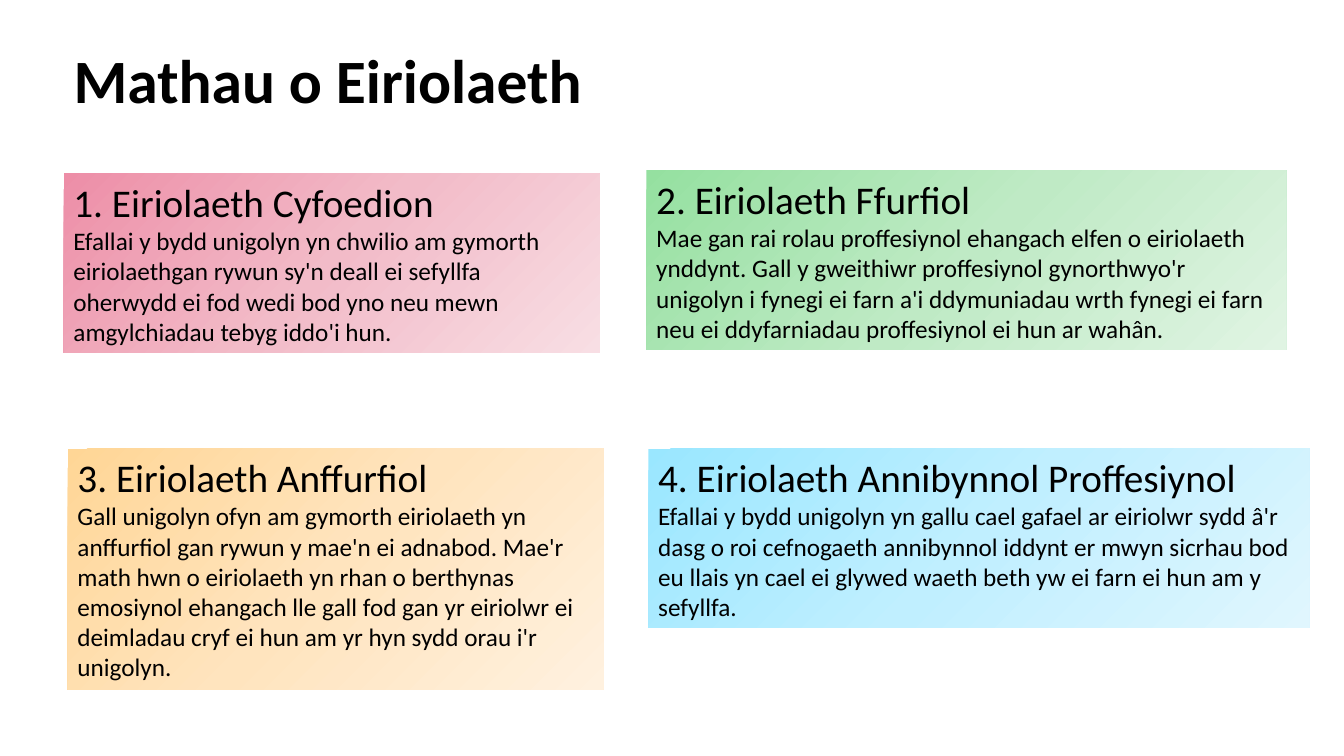
import copy
import dataclasses

import pptx
import pptx.dml.color
import pptx.enum.text
import pptx.oxml.ns
import pptx.util

RGB = pptx.dml.color.RGBColor
BLACK = RGB(0x00, 0x00, 0x00)
PINK = (RGB(0xED, 0x8E, 0xA7), RGB(0xF2, 0xBB, 0xC8), RGB(0xF8, 0xDE, 0xE4))
GREEN = (RGB(0x95, 0xE0, 0xA0), RGB(0xBF, 0xEA, 0xC5), RGB(0xE0, 0xF4, 0xE3))
AMBER = (RGB(0xFF, 0xD6, 0x96), RGB(0xFF, 0xE4, 0xBE), RGB(0xFF, 0xF1, 0xDF))
BLUE = (RGB(0x9A, 0xE7, 0xFF), RGB(0xC0, 0xEF, 0xFF), RGB(0xE0, 0xF6, 0xFE))
FONT = "Calibri"
SCALE = 9144


@dataclasses.dataclass(frozen=True)
class Card:
    left: int
    top: int
    width: int
    height: int
    tones: tuple[RGB, RGB, RGB]
    head: str
    body: str


CARDS = (
    Card(63, 172, 532, 178, PINK, "1. Eiriolaeth Cyfoedion",
         "Efallai y bydd unigolyn yn chwilio am gymorth eiriolaethgan rywun "
         "sy'n deall ei sefyllfa oherwydd ei fod wedi bod yno neu mewn "
         "amgylchiadau tebyg iddo'i hun."),
    Card(641, 169, 635, 178, GREEN, "2. Eiriolaeth Ffurfiol",
         "Mae gan rai rolau proffesiynol ehangach elfen o eiriolaeth ynddynt. "
         "Gall y gweithiwr proffesiynol gynorthwyo'r unigolyn i fynegi ei farn "
         "a'i ddymuniadau wrth fynegi ei farn neu ei ddyfarniadau proffesiynol "
         "ei hun ar wahân."),
    Card(67, 445, 532, 239, AMBER, "3. Eiriolaeth Anffurfiol",
         "Gall unigolyn ofyn am gymorth eiriolaeth yn anffurfiol gan rywun y "
         "mae'n ei adnabod. Mae'r math hwn o eiriolaeth yn rhan o berthynas "
         "emosiynol ehangach lle gall fod gan yr eiriolwr ei deimladau cryf ei "
         "hun am yr hyn sydd orau i'r unigolyn."),
    Card(643, 445, 656, 178, BLUE, "4. Eiriolaeth Annibynnol Proffesiynol",
         "Efallai y bydd unigolyn yn gallu cael gafael ar eiriolwr sydd â'r "
         "dasg o roi cefnogaeth annibynnol iddynt er mwyn sicrhau bod eu llais "
         "yn cael ei glywed waeth beth yw ei farn ei hun am y sefyllfa."),
)


def px(count: int) -> pptx.util.Emu:
    return pptx.util.Emu(count * SCALE)


def write(para, text: str, *, size: int, bold: bool = False,
          space: float = 1.0) -> None:
    para.alignment = pptx.enum.text.PP_ALIGN.LEFT
    para.line_spacing = space
    run = para.add_run()
    run.text = text
    run.font.name = FONT
    run.font.size = pptx.util.Pt(size)
    run.font.bold = bold
    run.font.color.rgb = BLACK


def shade(shape, tones: tuple[RGB, RGB, RGB]) -> None:
    shape.fill.gradient()
    shape.fill.gradient_angle = 315
    stops = shape.element.spPr.find(".//" + pptx.oxml.ns.qn("a:gsLst"))
    stops.insert(1, copy.deepcopy(stops[0]))
    for stop, tone, place in zip(shape.fill.gradient_stops, tones, (0, 0.5, 1)):
        stop.color.rgb = tone
        stop.position = place


def draw_card(slide, card: Card) -> None:
    box = slide.shapes.add_textbox(
        px(card.left), px(card.top), px(card.width), px(card.height))
    shade(box, card.tones)
    frame = box.text_frame
    frame.word_wrap = True
    frame.auto_size = pptx.enum.text.MSO_AUTO_SIZE.SHAPE_TO_FIT_TEXT
    write(frame.paragraphs[0], card.head, size=28)
    write(frame.add_paragraph(), card.body, size=18)


def draw_title(slide, text: str) -> None:
    title = slide.shapes.title
    title.left, title.top = px(63), px(17)
    title.width, title.height = px(1179), px(131)
    frame = title.text_frame
    frame.vertical_anchor = pptx.enum.text.MSO_ANCHOR.MIDDLE
    write(frame.paragraphs[0], text, size=44, bold=True, space=0.9)


def main() -> None:
    deck = pptx.Presentation()
    deck.slide_width, deck.slide_height = px(1333), px(750)
    slide = deck.slides.add_slide(deck.slide_layouts.get_by_name("Title Only"))
    draw_title(slide, "Mathau o Eiriolaeth")
    for card in CARDS:
        draw_card(slide, card)
    deck.save("out.pptx")


if __name__ == "__main__":
    main()
